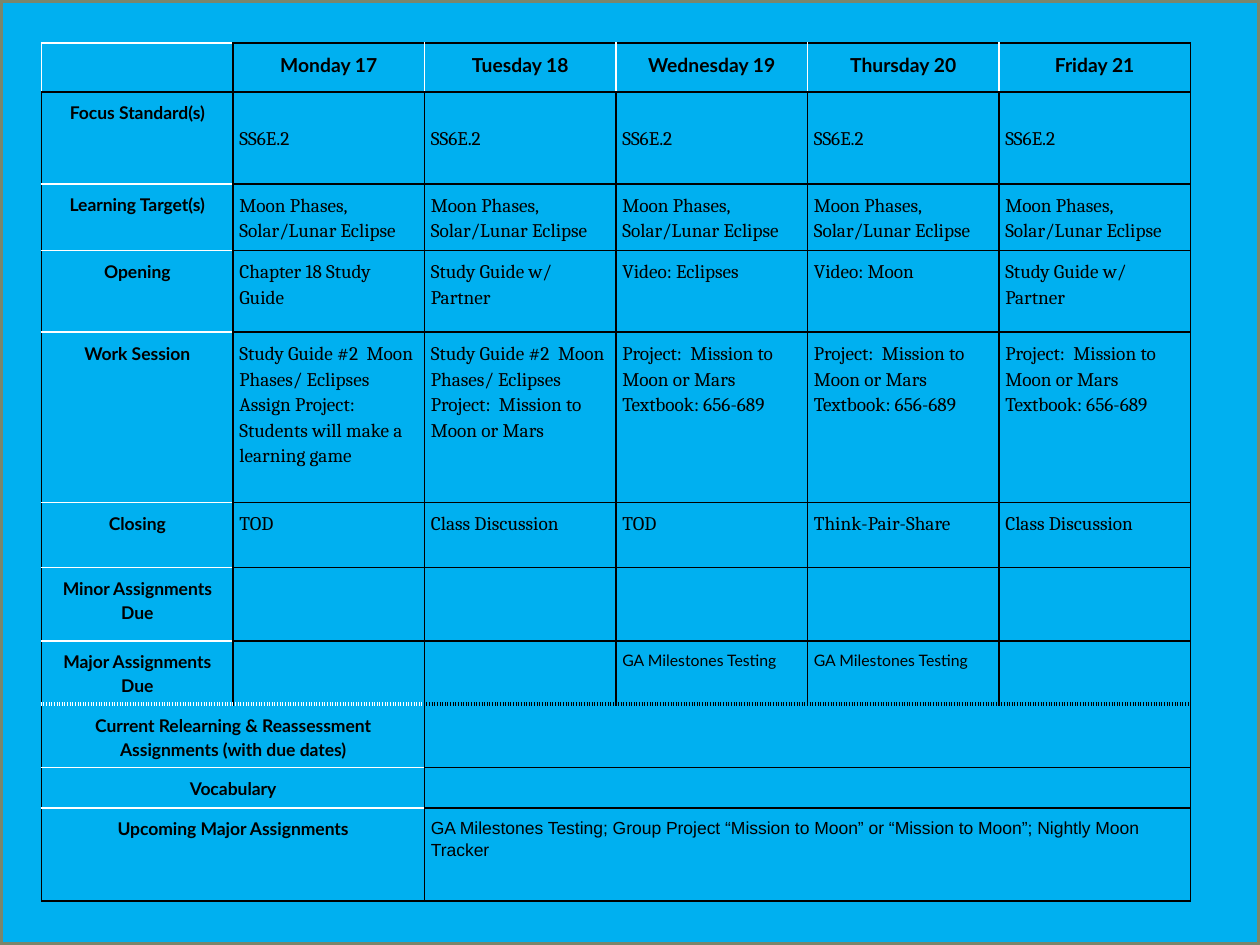
"""Build a weekly lesson plan slide."""
from dataclasses import dataclass
from itertools import product

from lxml.etree import SubElement
from pptx import Presentation
from pptx.dml.color import RGBColor as Rgb
from pptx.enum.shapes import MSO_SHAPE as Shape
from pptx.enum.text import MSO_ANCHOR as Anchor, PP_ALIGN as Align
from pptx.oxml.ns import qn
from pptx.slide import Slide
from pptx.table import Table, _Cell as Cell
from pptx.util import Inches, Pt


@dataclass(frozen=True)
class Style:
    """Font, size, weight and placement of text in a cell."""
    font: str
    size: int
    bold: bool = False
    align: Align = Align.LEFT
    anchor: Anchor = Anchor.TOP


@dataclass(frozen=True)
class Theme:
    """Colours, line widths and type of the slide."""
    ink: str = "000000"
    sky: str = "00B0F0"
    rim: str = "7A866C"
    pale: str = "FFFFFF"
    thin: float = 1
    thick: float = 2.25
    frame: float = 3
    lines: float = 1.15
    head: Style = Style("Lato", 11, True, Align.CENTER)
    label: Style = Style("Lato", 10, True, Align.CENTER)
    body: Style = Style("Cambria", 11)
    focus: Style = Style("Cambria", 11, anchor=Anchor.MIDDLE)
    test: Style = Style("Lato", 9)
    note: Style = Style("Arial", 10)


@dataclass(frozen=True)
class Row:
    """A labelled row with its height and day entries."""
    label: str
    high: float
    days: tuple[str, ...] = ()
    style: Style = Theme.body
    wide: bool = False


THEME = Theme()
COLS, WIDE = 6, 1.52
GUIDE = "Study Guide #2  Moon Phases/ Eclipses"
TASK = "Project:  Mission to Moon or Mars"
PAGES = f"{TASK}\nTextbook: 656-689"
PAIR = "Study Guide w/ Partner"
TEST = "GA Milestones Testing"
ROWS = (
    Row("", 0.39, ("Monday 17", "Tuesday 18", "Wednesday 19", "Thursday 20",
                   "Friday 21"), THEME.head),
    Row("Focus Standard(s)", 0.73, ("SS6E.2",) * 5, THEME.focus),
    Row("Learning Target(s)", 0.52, ("Moon Phases, Solar/Lunar Eclipse",) * 5),
    Row("Opening", 0.65, ("Chapter 18 Study Guide", PAIR, "Video: Eclipses",
                          "Video: Moon", PAIR)),
    Row("Work Session", 1.35, (
        f"{GUIDE}\nAssign Project: Students will make a learning game",
        f"{GUIDE}\n{TASK}", PAGES, PAGES, PAGES)),
    Row("Closing", 0.52, ("TOD", "Class Discussion", "TOD",
                          "Think-Pair-Share", "Class Discussion")),
    Row("Minor Assignments Due", 0.58),
    Row("Major Assignments Due", 0.5, ("", "", TEST, TEST, ""), THEME.test),
    Row("Current Relearning & Reassessment Assignments (with due dates)",
        0.5, wide=True),
    Row("Vocabulary", 0.32, wide=True),
    Row("Upcoming Major Assignments", 0.74, (
        "", f"{TEST}; Group Project “Mission to Moon” or “Mission to Moon”; "
        "Nightly Moon Tracker"), THEME.note, True),
)
FIRST = next(i for i, row in enumerate(ROWS) if row.wide)


def add_back(slide: Slide) -> None:
    """Fill the slide and draw the framed panel."""
    ground = slide.background.fill
    ground.solid()
    ground.fore_color.rgb = Rgb.from_string(THEME.ink)
    panel = slide.shapes.add_shape(Shape.RECTANGLE, 0, 0, Inches(10), Inches(7.5))
    panel.shadow.inherit = False
    panel.fill.solid()
    panel.fill.fore_color.rgb = Rgb.from_string(THEME.sky)
    panel.line.color.rgb = Rgb.from_string(THEME.rim)
    panel.line.width = Pt(THEME.frame)


def write(cell: Cell, text: str, style: Style) -> None:
    """Set the text of a cell in the given style."""
    cell.margin_left = cell.margin_right = Inches(0.05)
    cell.margin_top = cell.margin_bottom = Inches(0.06)
    cell.vertical_anchor = style.anchor
    cell.text_frame.text = text
    for para in cell.text_frame.paragraphs:
        para.alignment, para.line_spacing = style.align, THEME.lines
        for run in para.runs:
            font = run.font
            font.name, font.size, font.bold = style.font, Pt(style.size), style.bold
            font.color.rgb = Rgb.from_string(THEME.ink)
        if not para.runs:
            SubElement(para._p, qn("a:endParaRPr"), sz=str(style.size * 100))


def edge(cell: Cell, spot: int, side: str, pale: bool, dots: bool) -> None:
    """Add one border line to a cell."""
    width = Pt(THEME.thick if dots else THEME.thin)
    props = cell._tc.get_or_add_tcPr()
    line = SubElement(props, qn(f"a:ln{side}"), w=str(width))
    props.insert(spot, line)
    fill = SubElement(line, qn("a:solidFill"))
    SubElement(fill, qn("a:srgbClr"), val=THEME.pale if pale else THEME.ink)
    SubElement(line, qn("a:prstDash"), val="sysDot" if dots else "solid")


def rule(cell: Cell, row: int, col: int) -> None:
    """Border a cell by its place in the grid."""
    top = row == 0
    label = col == 0 or (ROWS[row].wide and col == 1)
    sides = {
        "L": (top and col != 1, False),
        "R": (top and 0 < col < COLS - 1, False),
        "T": (label and row != 1, row == FIRST),
        "B": (label and 0 < row < len(ROWS) - 1, row == FIRST - 1),
    }
    for spot, (side, (pale, dots)) in enumerate(sides.items()):
        edge(cell, spot, side, pale, dots)


def fill_row(table: Table, num: int, row: Row) -> None:
    """Size, merge and write one row."""
    table.rows[num].height = Inches(row.high)
    if row.wide:
        table.cell(num, 0).merge(table.cell(num, 1))
        table.cell(num, 2).merge(table.cell(num, COLS - 1))
    texts = (row.label, *row.days) + ("",) * (COLS - 1 - len(row.days))
    for col, text in enumerate(texts):
        write(table.cell(num, col), text, row.style if col else THEME.label)


def add_plan(slide: Slide) -> None:
    """Draw the week as a table."""
    high = sum(row.high for row in ROWS)
    table = slide.shapes.add_table(len(ROWS), COLS, Inches(0.33), Inches(0.34),
                                   Inches(WIDE * COLS), Inches(high)).table
    table.first_row = table.horz_banding = False
    for col in table.columns:
        col.width = Inches(WIDE)
    for num, row in enumerate(ROWS):
        fill_row(table, num, row)
    for row, col in product(range(len(ROWS)), range(COLS)):
        cell = table.cell(row, col)
        cell.fill.background()
        rule(cell, row, col)


def main() -> None:
    """Build and save the slide."""
    deck = Presentation()
    deck.slide_width, deck.slide_height = Inches(10), Inches(7.5)
    slide = deck.slides.add_slide(deck.slide_layouts[6])
    add_back(slide)
    add_plan(slide)
    deck.save("out.pptx")


if __name__ == "__main__":
    main()
